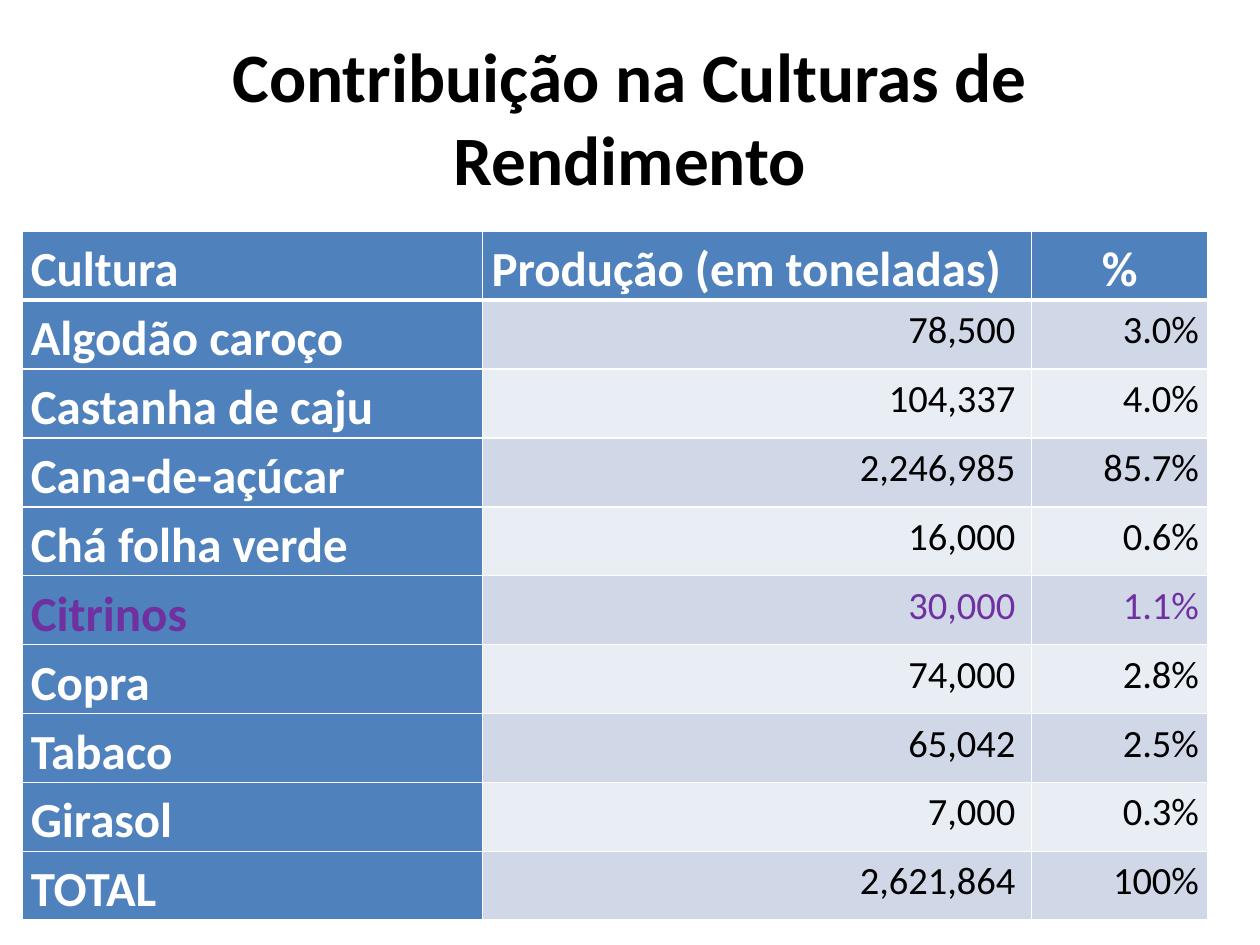
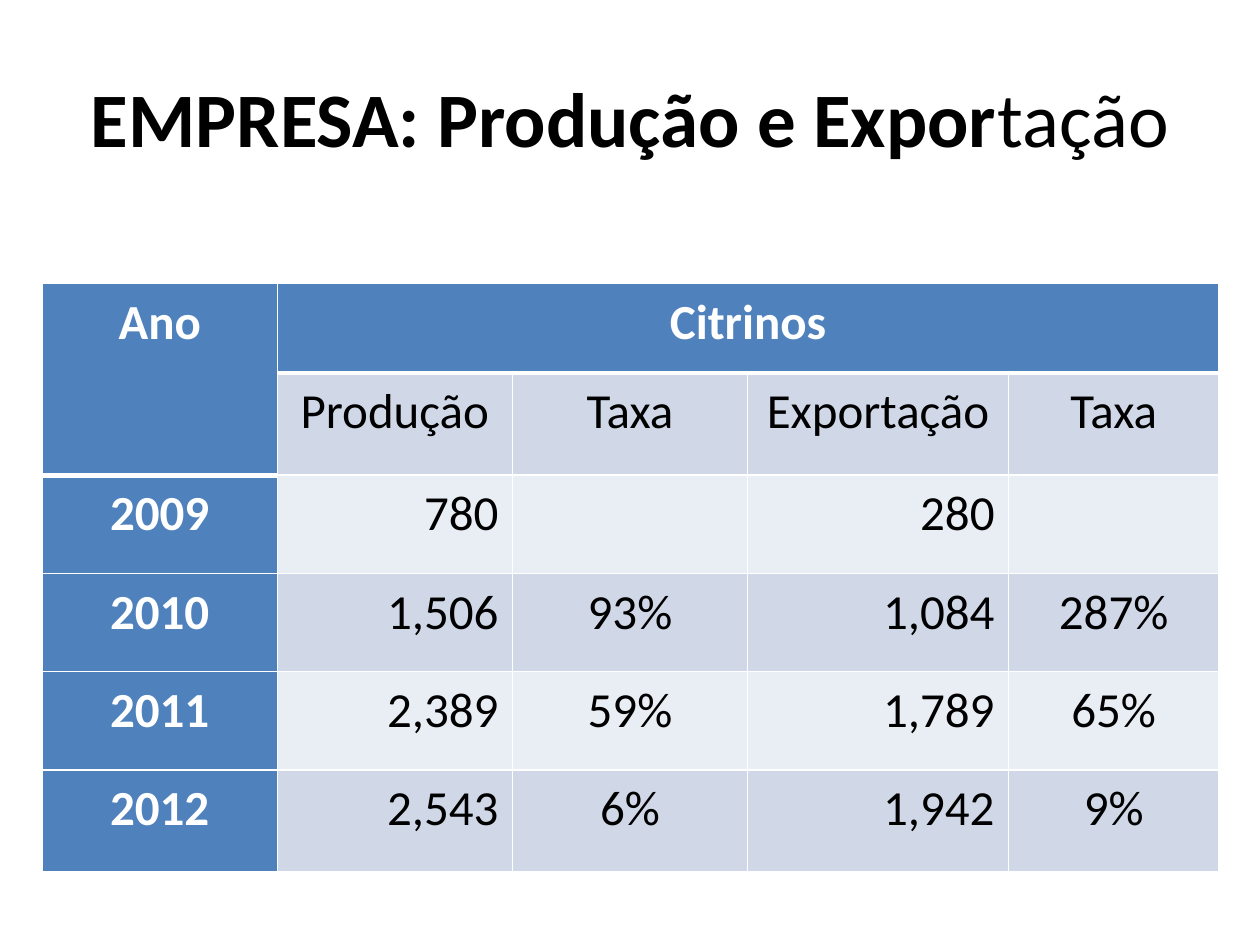
from dataclasses import dataclass

from lxml.etree import SubElement
from pptx import Presentation
from pptx.dml.color import RGBColor
from pptx.enum.text import MSO_ANCHOR, MSO_AUTO_SIZE, PP_ALIGN
from pptx.oxml.ns import qn
from pptx.util import Cm, Pt

LEFT, CENTER, RIGHT = PP_ALIGN.LEFT, PP_ALIGN.CENTER, PP_ALIGN.RIGHT


@dataclass(frozen=True)
class Theme:
    font: str = "Calibri"
    black: str = "000000"
    white: str = "FFFFFF"
    blue: str = "4F81BD"
    purple: str = "7030A0"
    bands: tuple = ("D0D8E8", "E9EDF4")
    label_size: float = 28
    line_spacing: float = 1.15
    thin_line: float = 1
    thick_line: float = 3
    cell_margin: float = 0.18


THEME = Theme()

# Content: title runs are (text, bold); header_depths counts the header rows
# of each column; merges are (first row, first column, last row, last column)
SLIDES = [
    {
        "title": [("Contribuição na Culturas de Rendimento", True)],
        "title_size": 39.6,
        "position": (0.44, 4.66),
        "columns": [9.29, 11.06, 3.56],
        "rows": [1.39] * 10,
        "cells": [
            ("Cultura", "Produção (em toneladas)", "%"),
            ("Algodão caroço", "78,500", "3.0%"),
            ("Castanha de caju", "104,337", "4.0%"),
            ("Cana-de-açúcar", "2,246,985", "85.7%"),
            ("Chá folha verde", "16,000", "0.6%"),
            ("Citrinos", "30,000", "1.1%"),
            ("Copra", "74,000", "2.8%"),
            ("Tabaco", "65,042", "2.5%"),
            ("Girasol", "7,000", "0.3%"),
            ("TOTAL", "2,621,864", "100%"),
        ],
        "header_depths": [1, 1, 1],
        "header_alignments": [LEFT, LEFT, CENTER],
        "heading_rows": 1,
        "alignments": [LEFT, RIGHT, RIGHT],
        "right_margins": [0.18, 0.32, 0.18],
        "value_size": 22,
        "highlight": "Citrinos",
        "merges": [],
    },
    {
        "title": [("EMPRESA: Produção e Expor", True), ("tação", False)],
        "title_size": 44,
        "position": (0.85, 5.72),
        "columns": [4.74, 4.74, 4.74, 5.26, 4.24],
        "rows": [1.8, 2.06, 1.98, 1.98, 1.98, 2.06],
        "cells": [
            ("Ano", "Citrinos", "", "", ""),
            ("", "Produção", "Taxa", "Exportação", "Taxa"),
            ("2009", "780", "", "280", ""),
            ("2010", "1,506", "93%", "1,084", "287%"),
            ("2011", "2,389", "59%", "1,789", "65%"),
            ("2012", "2,543", "6%", "1,942", "9%"),
        ],
        "header_depths": [2, 1, 1, 1, 1],
        "header_alignments": [CENTER] * 5,
        "heading_rows": 2,
        "alignments": [CENTER, RIGHT, CENTER, RIGHT, CENTER],
        "right_margins": [0.18, 0.28, 0.18, 0.28, 0.18],
        "value_size": 28,
        "highlight": None,
        "merges": [(0, 0, 1, 0), (0, 1, 0, 4)],
    },
]


def add_text(paragraph, text, *, size, color=THEME.black, bold=False,
             alignment=CENTER, line_spacing=None):
    paragraph.alignment = alignment
    paragraph.line_spacing = line_spacing
    run = paragraph.add_run()
    run.text = text
    run.font.name = THEME.font
    run.font.size = Pt(size)
    run.font.bold = bold
    run.font.color.rgb = RGBColor.from_string(color)


def set_borders(cell, *, top, bottom):
    properties = cell._tc.get_or_add_tcPr()
    widths = {"lnL": THEME.thin_line, "lnR": THEME.thin_line, "lnT": top, "lnB": bottom}
    for side, width in widths.items():
        line = SubElement(properties, qn(f"a:{side}"), w=str(Pt(width)))
        fill = SubElement(line, qn("a:solidFill"))
        SubElement(fill, qn("a:srgbClr"), val=THEME.white)


def format_title(slide, content):
    title = slide.shapes.title
    title.left, title.top, title.width, title.height = Cm(1.27), Cm(0.76), Cm(22.86), Cm(3.18)
    frame = title.text_frame
    frame.word_wrap = True
    frame.auto_size = MSO_AUTO_SIZE.NONE
    frame.vertical_anchor = MSO_ANCHOR.MIDDLE
    for text, bold in content["title"]:
        add_text(frame.paragraphs[0], text, size=content["title_size"], bold=bold)


def format_cell(cell, text, row, column, content):
    depth = content["header_depths"][column]
    is_label = row < depth or column == 0
    is_highlight = content["cells"][row][0] == content["highlight"]

    # Lines and fill: a thick rule closes the header
    set_borders(
        cell,
        top=THEME.thick_line if row == depth else THEME.thin_line,
        bottom=THEME.thick_line if row == depth - 1 else THEME.thin_line,
    )
    cell.fill.solid()
    cell.fill.fore_color.rgb = RGBColor.from_string(
        THEME.blue if is_label else THEME.bands[(row - 1) % 2])

    # Text
    in_heading = row < content["heading_rows"]
    cell.margin_top = cell.margin_bottom = 0
    cell.margin_left = Cm(THEME.cell_margin)
    cell.margin_right = Cm(THEME.cell_margin if in_heading else content["right_margins"][column])
    if not text:
        return
    color = THEME.white if is_label else THEME.black
    alignments = content["header_alignments" if in_heading else "alignments"]
    add_text(
        cell.text_frame.paragraphs[0], text,
        size=THEME.label_size if is_label else content["value_size"],
        color=THEME.purple if is_highlight else color,
        bold=is_label,
        alignment=alignments[column],
        line_spacing=THEME.line_spacing,
    )


def add_data_table(slide, content):
    columns, rows = content["columns"], content["rows"]
    left, top = content["position"]
    table = slide.shapes.add_table(
        len(rows), len(columns), Cm(left), Cm(top), Cm(sum(columns)), Cm(sum(rows))).table
    for column, width in zip(table.columns, columns):
        column.width = Cm(width)
    for row, height in zip(table.rows, rows):
        row.height = Cm(height)
    for row, texts in enumerate(content["cells"]):
        for column, text in enumerate(texts):
            format_cell(table.cell(row, column), text, row, column, content)
    for first_row, first_column, last_row, last_column in content["merges"]:
        table.cell(first_row, first_column).merge(table.cell(last_row, last_column))
        if last_row > first_row:
            # The merged cell carries the thick rule of its last row
            line = table.cell(first_row, first_column)._tc.tcPr.find(qn("a:lnB"))
            line.set("w", str(Pt(THEME.thick_line)))


def main():
    presentation = Presentation()
    presentation.slide_width, presentation.slide_height = Cm(25.4), Cm(19.05)
    title_only = presentation.slide_layouts[5]
    for content in SLIDES:
        slide = presentation.slides.add_slide(title_only)
        format_title(slide, content)
        add_data_table(slide, content)
    presentation.save("out.pptx")


if __name__ == "__main__":
    main()
